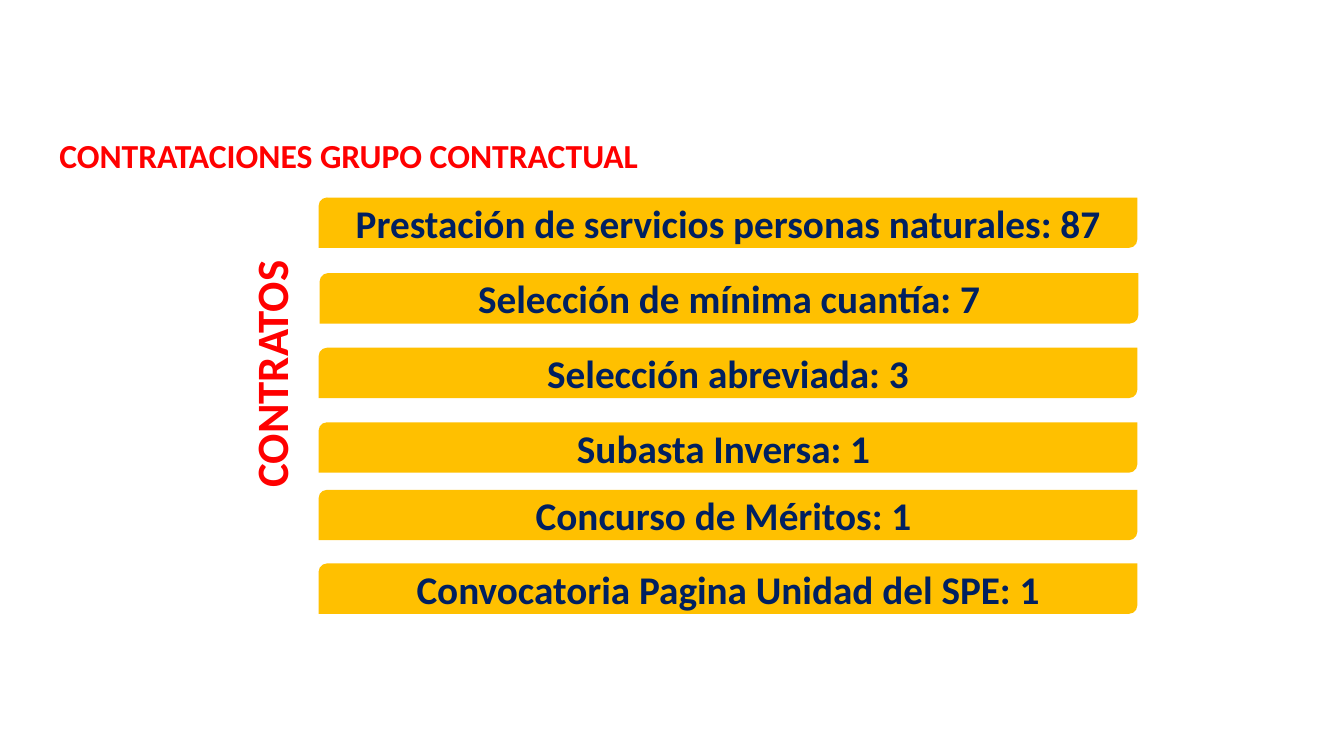
from pptx import Presentation
from pptx.dml.color import RGBColor
from pptx.enum.shapes import MSO_SHAPE as Shape
from pptx.enum.text import MSO_ANCHOR as Anchor, MSO_AUTO_SIZE as AutoSize, PP_ALIGN as Align
from pptx.util import Inches, Pt

COLORS = {"heading": "FF0000", "bar": "FFC000", "bar_text": "002060"}
BAR_HEIGHT = 0.5
CONTRACTS = [
    (0, 0, "Prestación de servicios personas naturales: 87"),
    (0.01, 0.75, "Selección de mínima cuantía: 7"),
    (0, 1.49, "Selección abreviada: 3"),
    (0, 2.23, "Subasta Inversa: 1 "),
    (0, 2.9, "Concurso de Méritos: 1 "),
    (0, 3.63, "Convocatoria Pagina Unidad del SPE: 1"),
]


def color(name):
    return RGBColor.from_string(COLORS[name])


def write(shape, text, size, color_name, align):
    para = shape.text_frame.paragraphs[0]
    para.text = text
    para.alignment = align
    font = para.font
    font.name = "Calibri"
    font.size = Pt(size)
    font.bold = True
    font.color.rgb = color(color_name)


def add_heading(page, box, text, size, align=Align.LEFT, rotation=0):
    heading = page.shapes.add_textbox(*map(Inches, box))
    heading.rotation = rotation
    heading.text_frame.word_wrap = True
    heading.text_frame.auto_size = AutoSize.SHAPE_TO_FIT_TEXT
    write(heading, text, size, "heading", align)


def add_contract_bars(page, box):
    left, top, width, height = box
    for shift, drop, text in CONTRACTS:
        place = (left + shift, top + drop, width, BAR_HEIGHT)
        bar = page.shapes.add_shape(Shape.ROUND_2_DIAG_RECTANGLE, *map(Inches, place))
        bar.shadow.inherit = False
        bar.fill.solid()
        bar.fill.fore_color.rgb = color("bar")
        bar.line.fill.background()
        bar.text_frame.word_wrap = True
        bar.text_frame.vertical_anchor = Anchor.MIDDLE
        write(bar, text, 28, "bar_text", Align.CENTER)


def main():
    deck = Presentation()
    deck.slide_width = Inches(13.33)
    deck.slide_height = Inches(7.5)
    page = deck.slides.add_slide(deck.slide_layouts[6])
    add_heading(page, (0.49, 1.29, 8.12, 0.5), "CONTRATACIONES GRUPO CONTRACTUAL", 24)
    add_contract_bars(page, (3.16, 1.96, 8.12, 4.13))
    add_heading(page, (1.36, 3.39, 2.65, 0.64), "CONTRATOS", 32, Align.CENTER, 270)
    deck.save("out.pptx")


if __name__ == "__main__":
    main()
